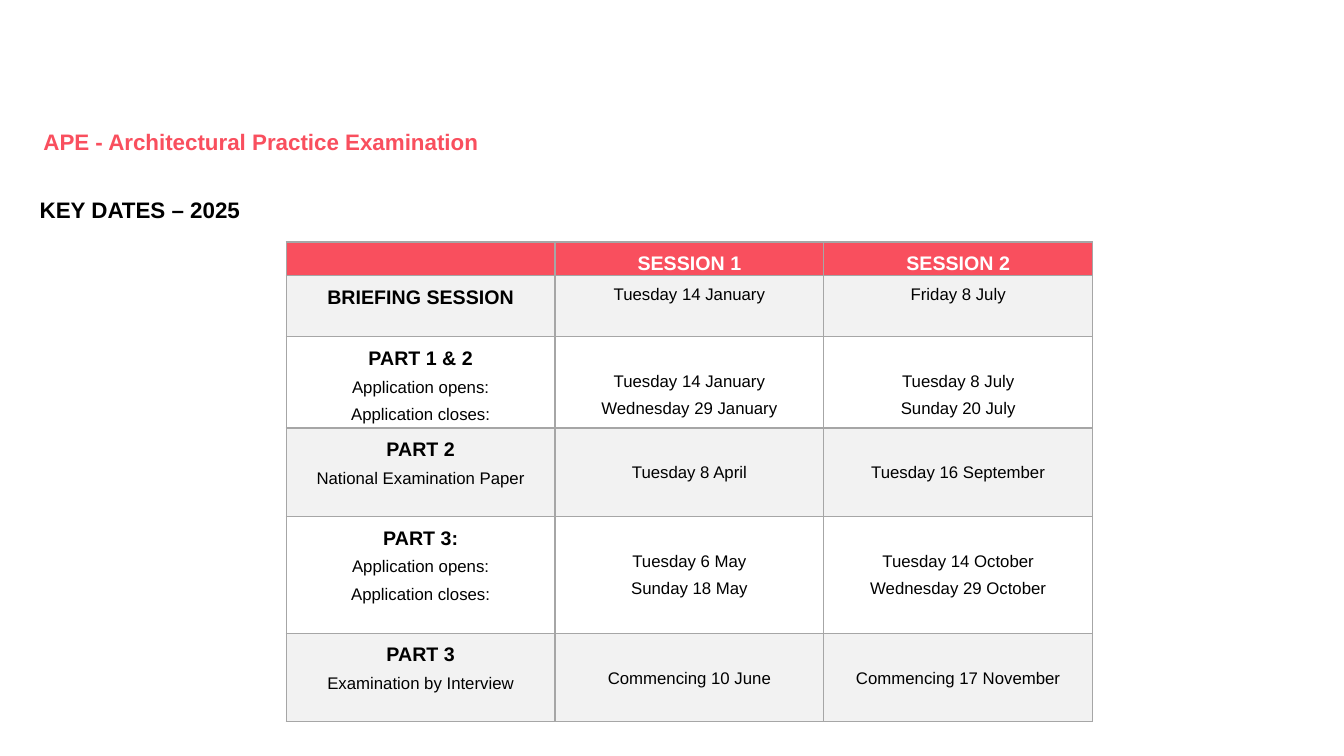
import pptx
import pptx.dml.color
import pptx.enum.text
import pptx.oxml
import pptx.oxml.ns
import pptx.util

Pt = pptx.util.Pt
RGBColor = pptx.dml.color.RGBColor
ALIGN = pptx.enum.text.PP_ALIGN

CORAL = RGBColor(0xF9, 0x4F, 0x5E)
BLACK = RGBColor(0, 0, 0)
WHITE = RGBColor(0xFF, 0xFF, 0xFF)
PALE_GREY = RGBColor(0xF2, 0xF2, 0xF2)
BORDER_GREY = RGBColor(0xA6, 0xA6, 0xA6)

SESSIONS = ["SESSION 1", "SESSION 2"]
# Row height, stage heading, stage details, dates of each session
STAGES = [
    (43.5, "BRIEFING SESSION", [], ["Tuesday 14 January"], ["Friday 8 July"]),
    (65.5, "PART 1 & 2", ["Application opens:", "Application closes:"],
     ["Tuesday 14 January", "Wednesday 29 January"],
     ["Tuesday 8 July", "Sunday 20 July"]),
    (63, "PART 2", ["National Examination Paper"],
     ["Tuesday 8 April"], ["Tuesday 16 September"]),
    (83.5, "PART 3:", ["Application opens:", "Application closes:"],
     ["Tuesday 6 May", "Sunday 18 May"],
     ["Tuesday 14 October", "Wednesday 29 October"]),
    (63, "PART 3", ["Examination by Interview"],
     ["Commencing 10 June"], ["Commencing 17 November"]),
]
HEADER_HEIGHT = 24
COLUMN_WIDTH = 192
DATE_DROP = 25.5  # puts dates level with the details under a stage heading


class KeyDatesSlide:
    font_name = "Arial"
    heading_size = 14
    detail_size = 12

    def __init__(self, presentation):
        self.slide = presentation.slides.add_slide(presentation.slide_layouts[5])

    def style(self, paragraph, size, color, bold=False):
        paragraph.font.name = self.font_name
        paragraph.font.size = Pt(size)
        paragraph.font.bold = bold
        paragraph.font.color.rgb = color

    def fill_line(self, shape, text, color):
        """Write one bold line at the top left of a shape."""
        frame = shape.text_frame
        frame.word_wrap = True
        frame.auto_size = pptx.enum.text.MSO_AUTO_SIZE.NONE
        frame.vertical_anchor = pptx.enum.text.MSO_ANCHOR.TOP
        frame.text = text
        frame.paragraphs[0].alignment = ALIGN.LEFT
        self.style(frame.paragraphs[0], 16, color, bold=True)

    def title(self, text, left, top, width, height):
        title = self.slide.shapes.title
        title.left, title.top = Pt(left), Pt(top)
        title.width, title.height = Pt(width), Pt(height)
        self.fill_line(title, text, CORAL)

    def subtitle(self, text, left, top, width, height):
        box = self.slide.shapes.add_textbox(Pt(left), Pt(top), Pt(width), Pt(height))
        self.fill_line(box, text, BLACK)

    def border(self, cell):
        properties = cell._tc.get_or_add_tcPr()
        for position, side in enumerate(("lnL", "lnR", "lnT", "lnB")):
            properties.insert(position, pptx.oxml.parse_xml(
                f'<a:{side} {pptx.oxml.ns.nsdecls("a")} w="{Pt(1)}"><a:solidFill>'
                f'<a:srgbClr val="{BORDER_GREY}"/></a:solidFill></a:{side}>'))

    def cell(self, cell, fill, lines=(), color=BLACK, heading=False,
             first_spacing=1.5, drop=0):
        """Fill a cell; with heading set, its first line is large and bold."""
        cell.fill.solid()
        cell.fill.fore_color.rgb = fill
        self.border(cell)
        cell.margin_left = cell.margin_right = Pt(5)
        cell.margin_top, cell.margin_bottom = Pt(drop), 0
        cell.text = "\n".join(lines)
        for index, paragraph in enumerate(cell.text_frame.paragraphs):
            first = index == 0
            paragraph.alignment = ALIGN.CENTER
            paragraph.line_spacing = first_spacing if first else 1.0
            paragraph.space_before = Pt(0 if first else 3)
            paragraph.space_after = Pt(3)
            large = heading and first
            self.style(paragraph, self.heading_size if large else self.detail_size,
                       color, bold=large)

    def dates_table(self, left, top):
        heights = [HEADER_HEIGHT] + [stage[0] for stage in STAGES]
        columns = len(SESSIONS) + 1
        table = self.slide.shapes.add_table(
            len(heights), columns, Pt(left), Pt(top),
            Pt(COLUMN_WIDTH * columns), Pt(sum(heights))).table
        table.first_row = table.horz_banding = False
        for column in table.columns:
            column.width = Pt(COLUMN_WIDTH)
        for row, height in zip(table.rows, heights):
            row.height = Pt(height)

        self.cell(table.cell(0, 0), CORAL)
        for column, session in enumerate(SESSIONS, 1):
            self.cell(table.cell(0, column), CORAL, [session], WHITE, heading=True)
        for row, (_, stage, details, *session_dates) in enumerate(STAGES, 1):
            fill = PALE_GREY if row % 2 else WHITE
            self.cell(table.cell(row, 0), fill, [stage, *details], heading=True)
            for column, dates in enumerate(session_dates, 1):
                self.cell(table.cell(row, column), fill, dates,
                          first_spacing=1.0 if details else 1.5,
                          drop=DATE_DROP if details else 0)


def main():
    presentation = pptx.Presentation()
    presentation.slide_width, presentation.slide_height = Pt(960), Pt(540)
    key_dates = KeyDatesSlide(presentation)
    key_dates.title("APE - Architectural Practice Examination", 23.8, 87.8, 479.5, 26.6)
    key_dates.subtitle("KEY DATES – 2025", 21.3, 136.8, 908.6, 89.3)
    key_dates.dates_table(204.5, 172.8)
    presentation.save("out.pptx")


if __name__ == "__main__":
    main()
